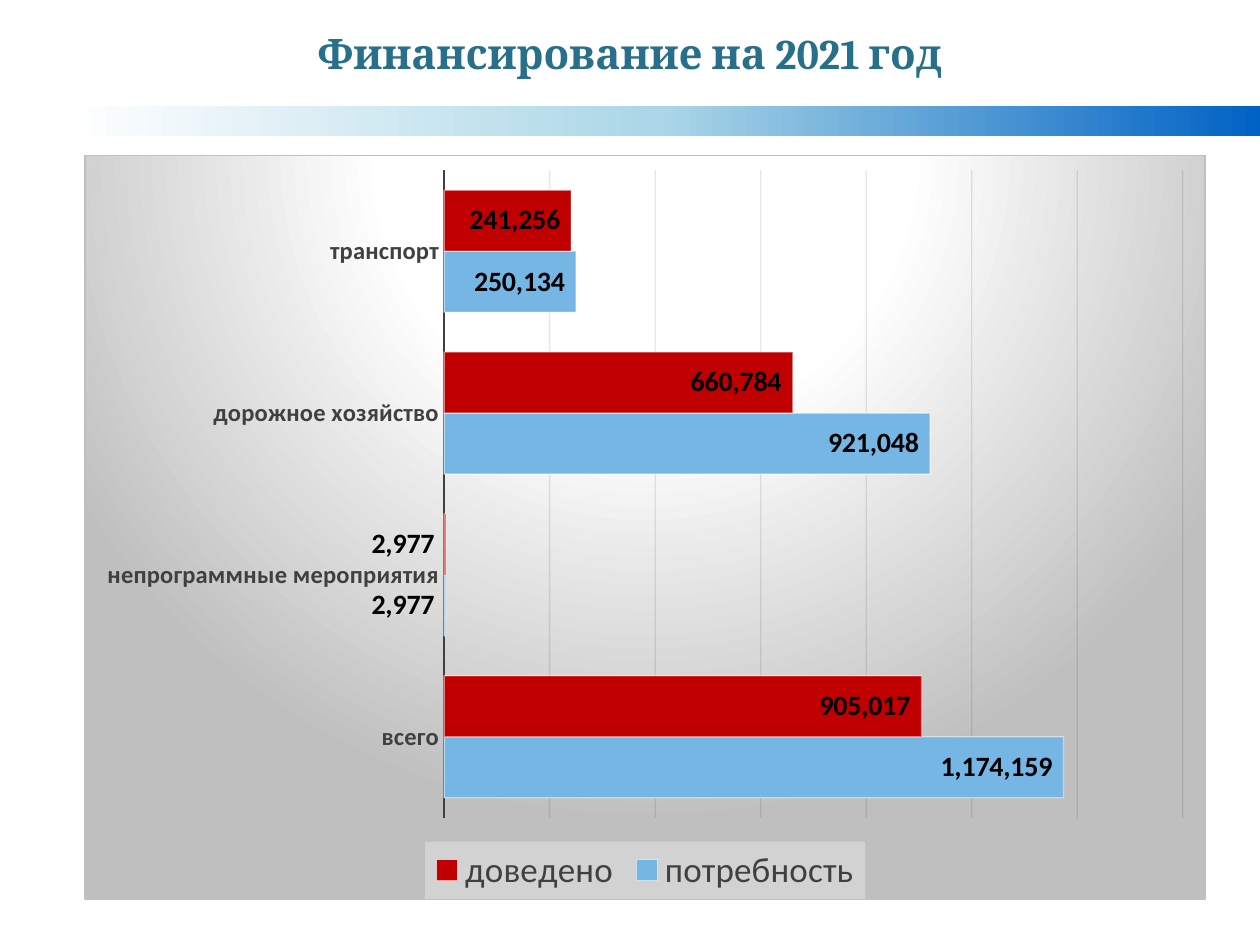
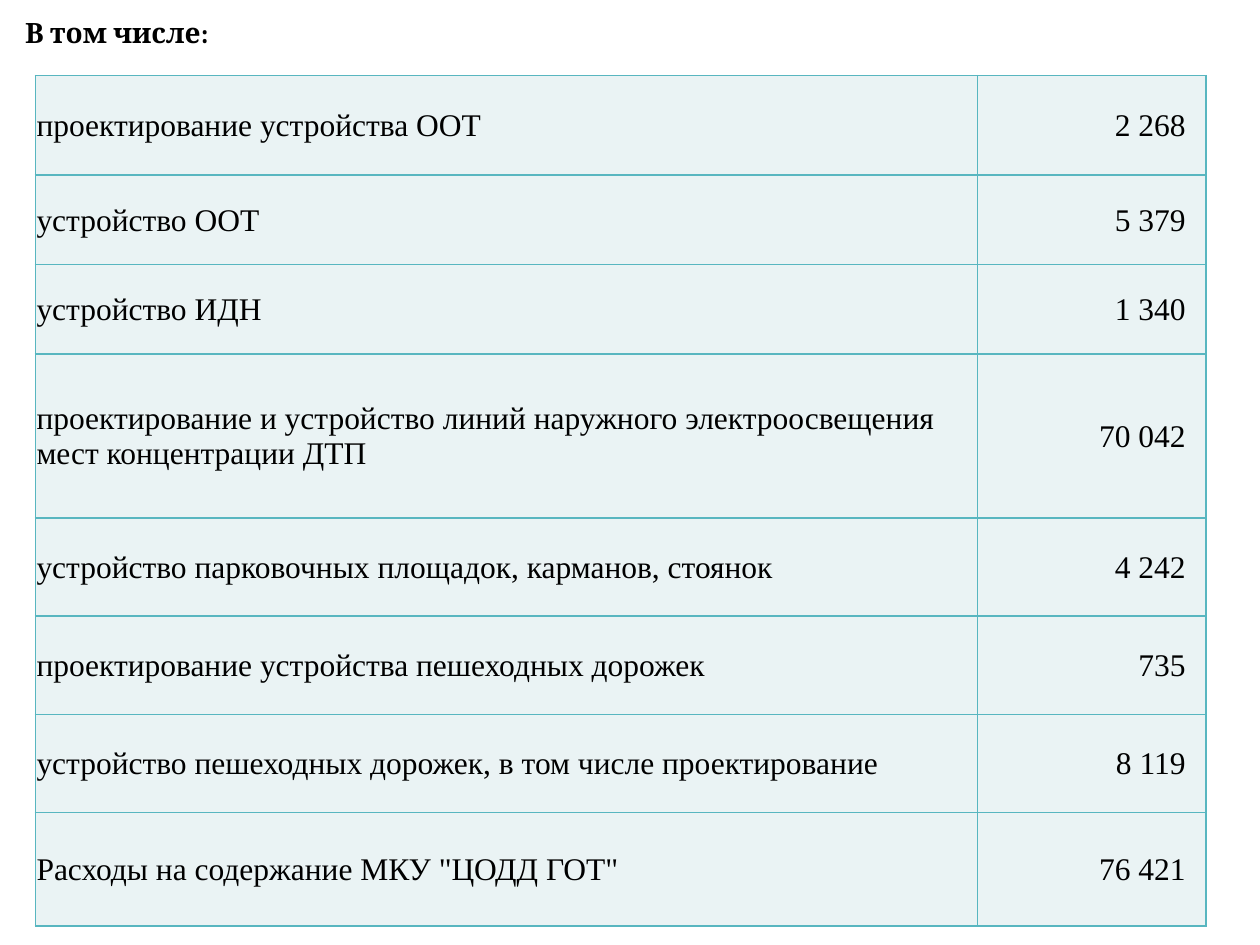
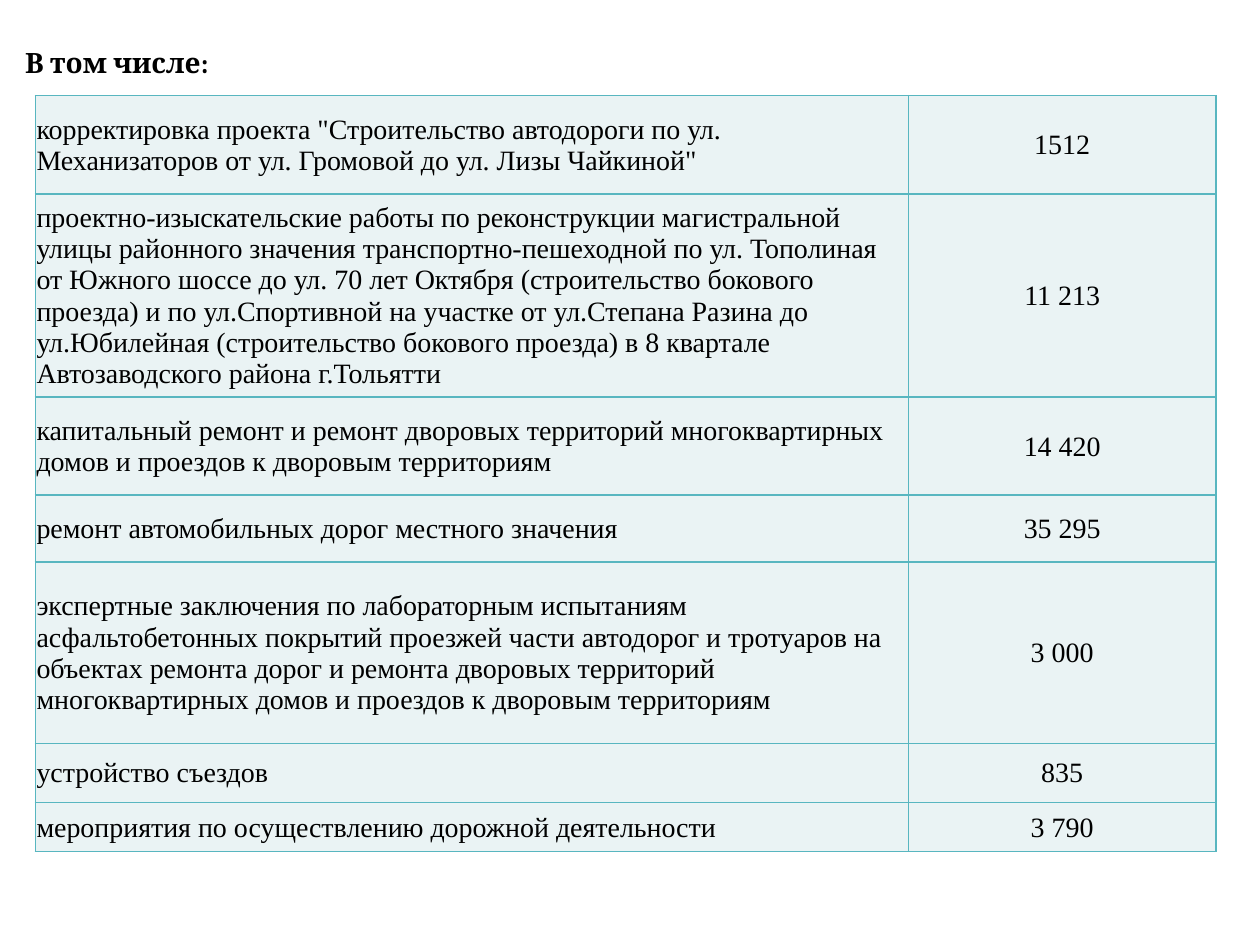
from lxml.etree import SubElement
from pptx import Presentation
from pptx.chart.data import CategoryChartData as ChartData
from pptx.dml.color import RGBColor
from pptx.enum.chart import XL_CHART_TYPE as Kind, XL_LABEL_POSITION as Spot
from pptx.enum.chart import XL_LEGEND_POSITION as Side, XL_TICK_MARK as Tick
from pptx.enum.shapes import MSO_SHAPE as Form
from pptx.enum.text import MSO_ANCHOR as Anchor, PP_ALIGN as Align
from pptx.oxml import parse_xml
from pptx.oxml.ns import nsdecls, qn
from pptx.util import Inches, Pt

INK, TEAL, GRAY = "000000", "276F8B", "404040"
EDGE, PALE, RED, SKY = "58B6C0", "EAF3F4", "C00000", "75B6E5"
HEAD = dict(name="Cambria", bold=True)
BODY = "Times New Roman"
SANS = "Calibri"
COUNT = '_-* #,##0_-;\\-* #,##0_-;_-* "-"??_-;_-@_'

CATS = ["всего", "непрограммные мероприятия", "дорожное хозяйство", "транспорт"]
SERIES = [
    ("потребность", SKY, [1174159, 2977, 921048, 250134]),
    ("доведено", RED, [905017, 2977, 660784, 241256]),
]
WORKS = [
    (0.79, "проектирование устройства ООТ", "2 268"),
    (0.71, "устройство ООТ", "5 379"),
    (0.71, "устройство ИДН", "1 340"),
    (1.3, "проектирование и устройство линий наружного электроосвещения мест концентрации ДТП", "70 042"),
    (0.78, "устройство парковочных площадок, карманов, стоянок", "4 242"),
    (0.78, "проектирование устройства пешеходных дорожек", "735"),
    (0.78, "устройство пешеходных дорожек, в том числе проектирование", "8 119"),
    (0.9, 'Расходы на содержание МКУ "ЦОДД ГОТ"', "76 421"),
]
ROADS = [
    (0.78, 'корректировка проекта "Строительство автодороги по ул. Механизаторов '
           'от ул. Громовой до ул. Лизы Чайкиной"', "1512"),
    (1.58, "проектно-изыскательские работы по реконструкции магистральной улицы "
           "районного значения транспортно-пешеходной по ул. Тополиная от Южного шоссе "
           "до ул. 70 лет Октября (строительство бокового проезда) и по ул.Спортивной "
           "на участке от ул.Степана Разина до ул.Юбилейная (строительство бокового "
           "проезда) в 8 квартале Автозаводского района г.Тольятти", "11 213"),
    (0.78, "капитальный ремонт и ремонт дворовых территорий многоквартирных домов "
           "и проездов к дворовым территориям", "14 420"),
    (0.53, "ремонт автомобильных дорог местного значения", "35 295"),
    (1.44, "экспертные заключения по лабораторным испытаниям асфальтобетонных покрытий "
           "проезжей части автодорог и тротуаров на объектах ремонта дорог и ремонта "
           "дворовых территорий многоквартирных домов и проездов к дворовым территориям", "3 000"),
    (0.47, "устройство съездов", "835"),
    (0.39, "мероприятия по осуществлению дорожной деятельности", "3 790"),
]


def tint(text):
    return RGBColor.from_string(text)


def put(item, **vals):
    for key, val in vals.items():
        setattr(item, key, val)


def style(font, size, color=INK, **vals):
    put(font, size=Pt(size), **vals)
    font.color.rgb = tint(color)


def stroke(line, color, width, alpha=None):
    line.width = Pt(width)
    line.color.rgb = tint(color)
    if alpha:
        node = next(line._ln.iter(qn("a:srgbClr")))
        SubElement(node, qn("a:alpha"), val=str(alpha * 1000))


def grad(stops, shade):
    marks = "".join(
        f'<a:gs pos="{pos * 1000}"><a:srgbClr val="{color}"/></a:gs>' for pos, color in stops
    )
    return f'<a:gradFill {nsdecls("a")} rotWithShape="1"><a:gsLst>{marks}</a:gsLst>{shade}</a:gradFill>'


def panel(inner):
    return parse_xml(f'<c:spPr {nsdecls("c", "a")}>{inner}</c:spPr>')


def add_head(slide, box, text, size, color, align, left=0.1):
    frame = slide.shapes.add_textbox(*map(Inches, box)).text_frame
    put(frame, word_wrap=True, vertical_anchor=Anchor.MIDDLE, margin_left=Inches(left))
    para = frame.paragraphs[0]
    put(para, text=text, alignment=align)
    style(para.runs[0].font, size, color, **HEAD)


def add_band(slide, box):
    band = slide.shapes.add_shape(Form.RECTANGLE, *map(Inches, box))
    band.shadow.inherit = False
    band.line.fill.background()
    stops = [(0, "0062C4"), (50, "AAD6E7"), (100, "FFFFFF")]
    fill = grad(stops, '<a:lin ang="10800000" scaled="0"/>')
    band._element.spPr.find(qn("a:prstGeom")).addnext(parse_xml(fill))


def add_back(chart):
    stops = [(0, "FFFFFF"), (39, "FFFFFF"), (100, "BFBFBF")]
    glow = ('<a:path path="circle"><a:fillToRect l="50000" t="-80000" '
            'r="50000" b="180000"/></a:path>')
    edge = '<a:ln w="9525"><a:solidFill><a:srgbClr val="BFBFBF"/></a:solidFill></a:ln>'
    chart._chartSpace.find(qn("c:chart")).addnext(panel(grad(stops, glow) + edge))


def add_key(chart):
    chart.has_legend = True
    key = chart.legend
    put(key, position=Side.BOTTOM, include_in_layout=False)
    style(key.font, 20, GRAY, name=SANS)
    fill = '<a:solidFill><a:srgbClr val="F2F2F2"><a:alpha val="39000"/></a:srgbClr></a:solidFill>'
    key._element.find(qn("c:overlay")).addnext(panel(fill))


def add_bars(slide, box):
    data = ChartData(number_format=COUNT)
    data.categories = CATS
    for name, _, vals in SERIES:
        data.add_series(name, vals)
    chart = slide.shapes.add_chart(Kind.BAR_CLUSTERED, *map(Inches, box), data).chart
    chart.has_title = False
    style(chart.font, 10, name=SANS)
    add_back(chart)
    add_key(chart)

    names, scale = chart.category_axis, chart.value_axis
    put(names, major_tick_mark=Tick.NONE, minor_tick_mark=Tick.NONE)
    style(names.tick_labels.font, 14, GRAY, name=SANS, bold=True)
    stroke(names.format.line, GRAY, 1.5)
    put(scale, visible=False, has_major_gridlines=True,
        minimum_scale=0, maximum_scale=1400000, major_unit=200000)
    stroke(scale.major_gridlines.format.line, "0D0D0D", 0.75, 10)

    plot = chart.plots[0]
    put(plot, gap_width=65, overlap=0, vary_by_categories=False)
    for bar, (_, color, _) in zip(plot.series, SERIES):
        bar.invert_if_negative = False
        bar.format.fill.solid()
        bar.format.fill.fore_color.rgb = tint(color)
        stroke(bar.format.line, "FFFFFF", 0.75, 50)
        tags = bar.data_labels
        put(tags, show_value=True, position=Spot.INSIDE_END,
            number_format=COUNT, number_format_is_linked=False)
        style(tags.font, 16, name=SANS, bold=True)


def add_edges(cell):
    props = cell._tc.get_or_add_tcPr()
    for side in ("lnL", "lnR", "lnT", "lnB"):
        line = SubElement(props, qn("a:" + side), w=str(Pt(1)))
        fill = SubElement(line, qn("a:solidFill"))
        SubElement(fill, qn("a:srgbClr"), val=EDGE)


def fill_cell(cell, text, size, align, right):
    put(cell, vertical_anchor=Anchor.MIDDLE, margin_left=Inches(0.01),
        margin_top=Inches(0.01), margin_right=Inches(right), margin_bottom=0)
    add_edges(cell)
    cell.fill.solid()
    cell.fill.fore_color.rgb = tint(PALE)
    para = cell.text_frame.paragraphs[0]
    put(para, text=text, alignment=align)
    style(para.runs[0].font, size, name=BODY)


def add_costs(slide, left, top, cols, rows, size, align, right):
    high = sum(row[0] for row in rows)
    box = map(Inches, (left, top, sum(cols), high))
    grid = slide.shapes.add_table(len(rows), len(cols), *box).table
    put(grid, first_row=False, horz_banding=False)
    for col, wide in zip(grid.columns, cols):
        col.width = Inches(wide)
    for line, (tall, work, cost) in zip(grid.rows, rows):
        line.height = Inches(tall)
        fill_cell(line.cells[0], work, size, Align.LEFT, 0.01)
        fill_cell(line.cells[1], cost, size, align, right)


def chart_page(slide):
    add_band(slide, (0.51, 0.84, 9.49, 0.24))
    add_head(slide, (0, 0.17, 10, 0.5), "Финансирование на 2021 год", 24, TEAL, Align.CENTER)
    add_bars(slide, (0.67, 1.23, 8.9, 5.91))


def cost_page(slide, head, *table):
    add_head(slide, (0, 0, 10, head), "В том числе:", 16, INK, Align.LEFT, 0.2)
    add_costs(slide, 0.28, *table)


def main():
    deck = Presentation()
    put(deck, slide_width=Inches(10), slide_height=Inches(7.5))
    blank = deck.slide_layouts[6]
    first, second, third = (deck.slides.add_slide(blank) for _ in range(3))
    chart_page(first)
    cost_page(second, 0.52, 0.6, (7.48, 1.81), WORKS, 18, Align.RIGHT, 0.16)
    cost_page(third, 0.99, 0.76, (6.93, 2.44), ROADS, 16, Align.CENTER, 0.01)
    deck.save("out.pptx")


if __name__ == "__main__":
    main()
